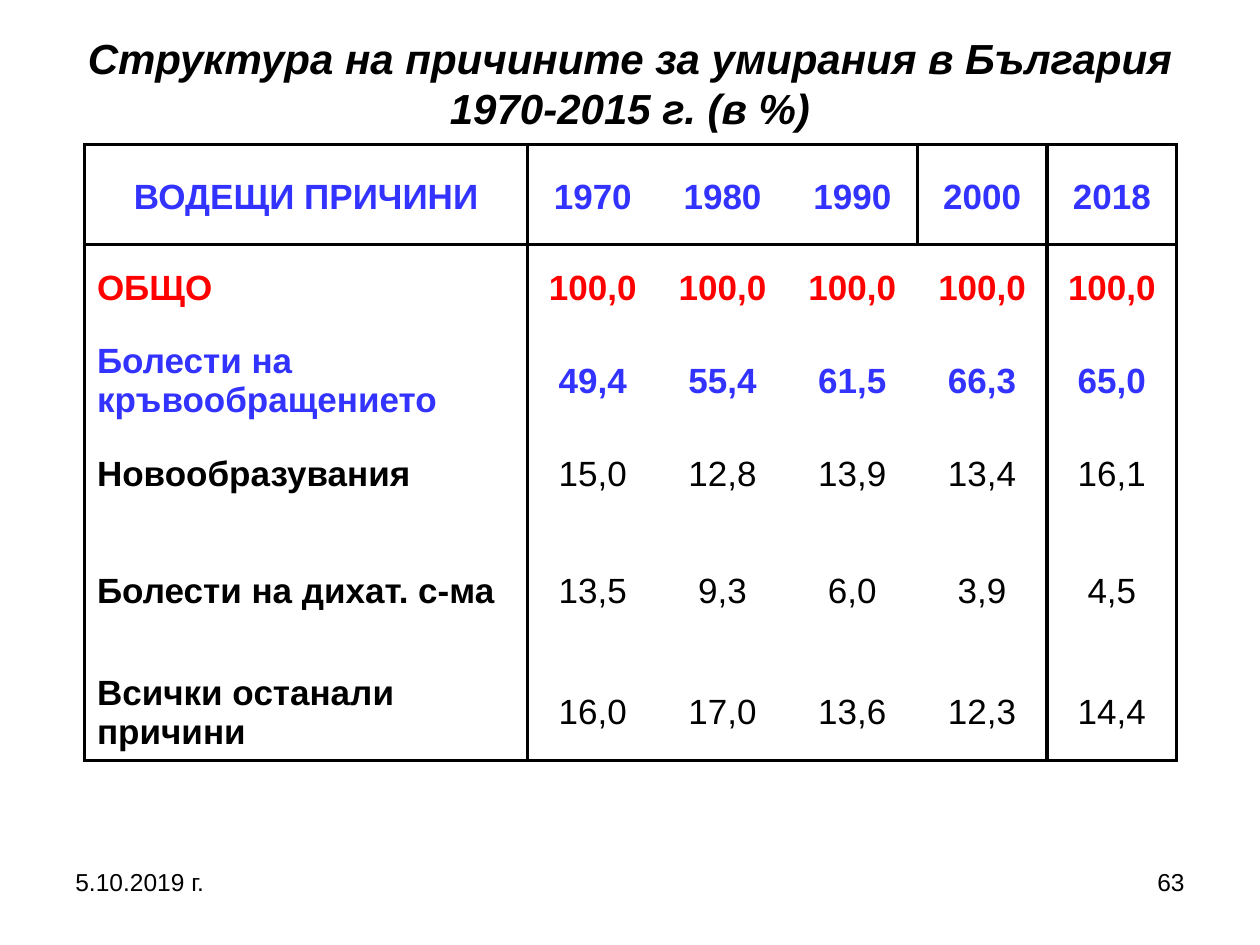
from lxml.etree import SubElement
from pptx import Presentation
from pptx.dml.color import RGBColor
from pptx.enum.text import MSO_ANCHOR as ANCHOR, PP_ALIGN as ALIGN
from pptx.oxml.ns import qn
from pptx.util import Inches, Pt

COLORS = {"black": "000000", "blue": "3333FF", "red": "FF0000", "white": "FFFFFF"}

HEADER = ["ВОДЕЩИ ПРИЧИНИ", "1970", "1980", "1990", "2000", "2018"]
CAUSES = [
    ["ОБЩО", "100,0", "100,0", "100,0", "100,0", "100,0"],
    ["Болести на кръвообращението", "49,4", "55,4", "61,5", "66,3", "65,0"],
    ["Новообразувания", "15,0", "12,8", "13,9", "13,4", "16,1"],
    ["Болести на дихат. с-ма", "13,5", "9,3", "6,0", "3,9", "4,5"],
    ["Всички останали причини", "16,0", "17,0", "13,6", "12,3", "14,4"],
]
ROW_COLORS = ["blue", "red", "blue", "black", "black", "black"]
COL_WIDTHS = [3.52] + [1.03] * 5
ROW_HEIGHTS = [0.79, 0.7, 0.77, 0.71, 1.15, 0.77]
FULL_VERTICALS = {0, 1, 5, 6}
HEADER_VERTICALS = FULL_VERTICALS | {4}
HORIZONTALS = {0, 1, 6}


class SlideBuilder:
    font = "Arial"
    border = Pt(2)

    def __init__(self, slide):
        self.s = slide
        fill = slide.background.fill
        fill.solid()
        fill.fore_color.rgb = RGBColor.from_string(COLORS["white"])

    def run(self, p, text, size, color="black", bold=False, italic=False):
        r = p.add_run()
        r.text = text
        f = r.font
        f.name, f.size, f.bold, f.italic = self.font, Pt(size), bold, italic
        f.color.rgb = RGBColor.from_string(COLORS[color])

    def text(self, box, lines, size, align=ALIGN.LEFT, anchor=ANCHOR.TOP,
             wrap=True, **style):
        sp = self.s.shapes.add_textbox(*map(Inches, box))
        tf = sp.text_frame
        tf.word_wrap = wrap
        tf.vertical_anchor = anchor
        for i, line in enumerate(lines):
            p = tf.add_paragraph() if i else tf.paragraphs[0]
            p.alignment = align
            self.run(p, line, size, **style)

    def borders(self, cell, sides):
        tc_pr = cell._tc.get_or_add_tcPr()
        for tag, visible in sides.items():
            ln = SubElement(tc_pr, qn(f"a:{tag}"), w=str(self.border))
            if visible:
                fill = SubElement(ln, qn("a:solidFill"))
                SubElement(fill, qn("a:srgbClr"), val=COLORS["black"])
            else:
                SubElement(ln, qn("a:noFill"))

    def table(self, left, top, rows):
        size = Inches(sum(COL_WIDTHS)), Inches(sum(ROW_HEIGHTS))
        frame = self.s.shapes.add_table(
            len(rows), len(COL_WIDTHS), Inches(left), Inches(top), *size)
        tbl = frame.table
        tbl.horz_banding = False
        for col, width in zip(tbl.columns, COL_WIDTHS):
            col.width = Inches(width)
        for row, height in zip(tbl.rows, ROW_HEIGHTS):
            row.height = Inches(height)
        for i, values in enumerate(rows):
            verticals = FULL_VERTICALS if i else HEADER_VERTICALS
            for j, value in enumerate(values):
                cell = tbl.cell(i, j)
                self.borders(cell, {
                    "lnL": j in verticals, "lnR": j + 1 in verticals,
                    "lnT": i in HORIZONTALS, "lnB": i + 1 in HORIZONTALS})
                cell.fill.background()
                cell.vertical_anchor = ANCHOR.MIDDLE
                p = cell.text_frame.paragraphs[0]
                p.alignment = ALIGN.LEFT if i and not j else ALIGN.CENTER
                if i == 0:
                    p.line_spacing = 1.14
                self.run(p, value, 20, ROW_COLORS[i], bold=i < 3 or j == 0)


def main():
    prs = Presentation()
    prs.slide_width, prs.slide_height = Inches(10), Inches(7.5)
    b = SlideBuilder(prs.slides.add_slide(prs.slide_layouts[6]))
    b.text((7.17, 6.83, 2.33, 0.52), ["63"], 14, align=ALIGN.RIGHT)
    b.table(0.67, 1.15, [HEADER] + CAUSES)
    b.text((0.51, 0.2, 8.98, 0.91),
           ["Структура на причините за умирания в България", "1970-2015 г. (в %)"],
           24, align=ALIGN.CENTER, anchor=ANCHOR.MIDDLE, wrap=False,
           bold=True, italic=True)
    b.text((0.5, 6.83, 2.33, 0.52), ["5.10.2019 г."], 14)
    prs.save("out.pptx")


if __name__ == "__main__":
    main()
